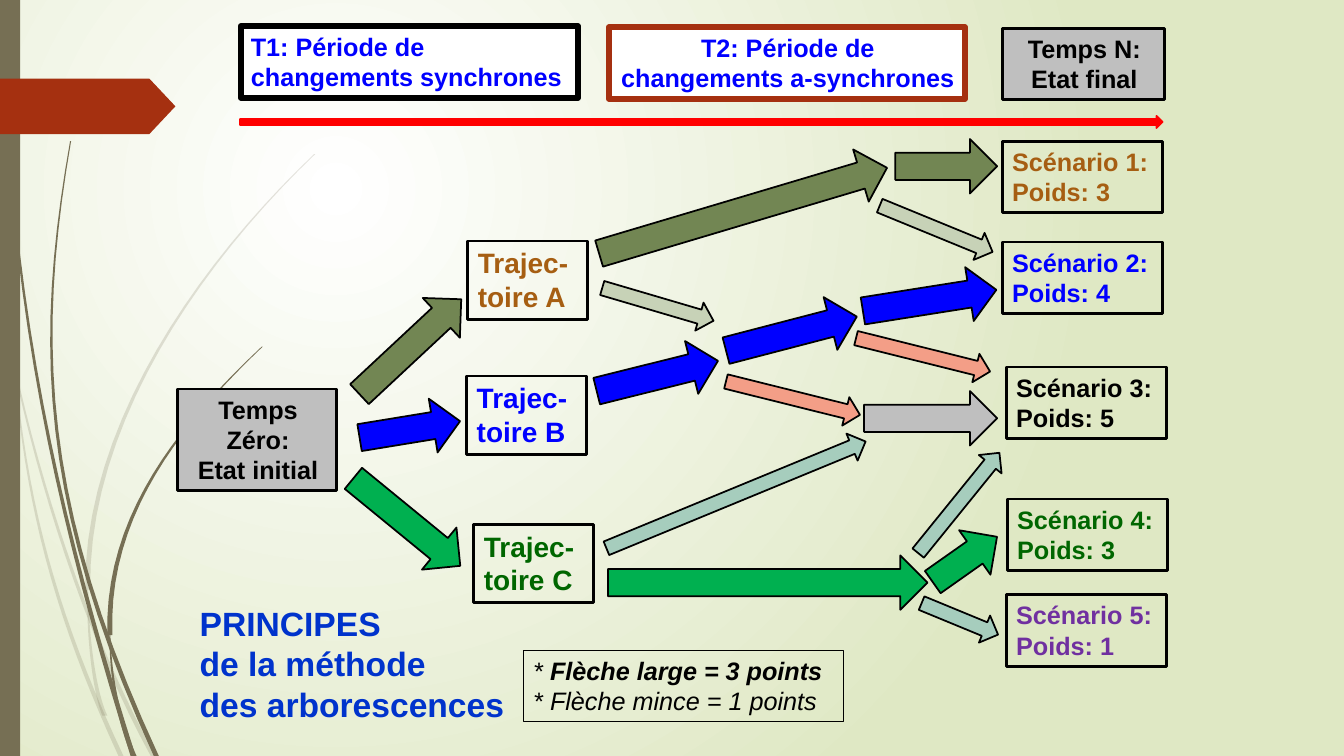
import pptx
import pptx.util
import pptx.dml.color
import pptx.enum.shapes
import pptx.enum.text
import lxml.etree

KIND = pptx.enum.shapes.MSO_SHAPE
LEFT = pptx.enum.text.PP_ALIGN.LEFT
CENTER = pptx.enum.text.PP_ALIGN.CENTER
DRAWING = "{http://schemas.openxmlformats.org/drawingml/2006/main}"

deck = pptx.Presentation()
deck.slide_width = pptx.util.Inches(13.33)
deck.slide_height = pptx.util.Inches(7.5)
slide = deck.slides.add_slide(deck.slide_layouts[5])
shapes = slide.shapes

# Square grid of 75 rows; every length below counts its cells
CELL = deck.slide_height / 75


def paint(shape, fill=None, line=None, width=1.25):
    shape.shadow.inherit = False
    for part, color in ((shape.fill, fill), (shape.line.fill, line)):
        if color:
            part.solid()
            part.fore_color.rgb = pptx.dml.color.RGBColor.from_string(color)
        else:
            part.background()
    if line:
        shape.line.width = pptx.util.Pt(width)


def write(frame, lines, size, color, align=LEFT, italic=False):
    frame.word_wrap = True
    frame.auto_size = pptx.enum.text.MSO_AUTO_SIZE.NONE
    frame.vertical_anchor = pptx.enum.text.MSO_ANCHOR.TOP
    frame.margin_right = pptx.util.Inches(0.08)
    for number, line in enumerate(lines):
        paragraph = frame.add_paragraph() if number else frame.paragraphs[0]
        paragraph.alignment = align
        for text, bold in line:
            run = paragraph.add_run()
            run.text = text
            run.font.name = "Arial"
            run.font.size = pptx.util.Pt(size)
            run.font.bold = bold
            run.font.italic = italic
            run.font.color.rgb = pptx.dml.color.RGBColor.from_string(color)


# Background: glow spreading from the upper left
glow = slide.background.fill
glow.gradient()
for stop, position, color in zip(glow.gradient_stops, (0, 1), ("FFFFFF", "DFE8C4")):
    stop.position = position
    stop.color.rgb = pptx.dml.color.RGBColor.from_string(color)
gradient = slide.element.xpath(".//p:bg//a:gradFill")[0]
for linear in gradient.findall(DRAWING + "lin"):
    gradient.remove(linear)
circle = lxml.etree.SubElement(gradient, DRAWING + "path", {"path": "circle"})
lxml.etree.SubElement(circle, DRAWING + "fillToRect",
                      {"l": "50000", "t": "50000", "r": "100000", "b": "100000"})

# Grass strands: cubic curves from thin tip to wider root
strands = {
    "20000": [((0, 29), (2.5, 44), (8, 62), (15.2, 75)),
              ((1.3, 35), (2.5, 50), (5.5, 61), (12, 75)),
              ((31.2, 15.3), (20, 26), (8.5, 42), (8.7, 58.5)),
              ((8.7, 58.5), (8.7, 64), (9.5, 69), (10.4, 71))],
    "100000": [((0.3, 0), (0.6, 30), (6, 52), (13.2, 75)),
               ((7, 14), (3.5, 34), (4, 50), (15.5, 75)),
               ((26, 34.4), (18, 42), (10.5, 51), (10.9, 63)),
               ((10.9, 63), (11, 68), (12, 72), (13.3, 75))],
}
STEPS = 20
for opacity, curves in strands.items():
    for curve in curves:
        left_edge, right_edge = [], []
        for step in range(STEPS + 1):
            t = step / STEPS
            shares = ((1 - t) ** 3, 3 * t * (1 - t) ** 2, 3 * t * t * (1 - t), t ** 3)
            x, y = (sum(s * v for s, v in zip(shares, axis)) for axis in zip(*curve))
            half = 0.05 + 0.2 * t
            left_edge.append(((x - half) * CELL, y * CELL))
            right_edge.append(((x + half) * CELL, y * CELL))
        outline = left_edge + right_edge[::-1]
        builder = shapes.build_freeform(*outline[0])
        builder.add_line_segments(outline[1:], close=True)
        strand = builder.convert_to_shape()
        paint(strand, "766F54")
        tint = strand.element.xpath("./p:spPr/a:solidFill/a:srgbClr")[0]
        lxml.etree.SubElement(tint, DRAWING + "alpha", {"val": opacity})

# Side band and ribbon
band = shapes.add_shape(KIND.RECTANGLE, 0, 0, round(2 * CELL), deck.slide_height)
paint(band, "766F54")
ribbon = shapes.add_shape(KIND.PENTAGON, 0, *(round(v * CELL) for v in (7.8, 17.4, 5.5)))
ribbon.adjustments[0] = 0.47
paint(ribbon, "A53010")

# Arrows: fill, border and thickness, then left, middle row, length, rotation
WIDE, THIN = 5.4, 2.9
arrows = [
    ("728653", "000000", WIDE, [(33.8, 34.4, 13.8, -43), (58.8, 20.9, 29.8, -16.6),
                                (88.8, 16.5, 10.1, 0)]),
    ("C7D2B7", "000000", THIN, [(59.5, 30.2, 11.5, 16.4), (86.8, 22.7, 12.1, 22.3)]),
    ("0000FF", "000000", WIDE, [(35.6, 42.6, 10.1, -9.3), (59, 37.3, 12.4, -14),
                                (71.8, 33.1, 13.4, -14.6), (85.5, 29.8, 13.4, -9)]),
    ("F39E87", "000000", THIN, [(84.7, 35.2, 13.7, 14), (71.8, 39.5, 13.7, 14)]),
    ("BFBFBF", "000000", WIDE, [(85.7, 41.5, 13.2, 0)]),
    ("A6CDBD", "000000", THIN, [(59.1, 49.1, 27.8, -22.4), (88.7, 49.9, 12.8, -51),
                                (91.1, 61.4, 8.2, 22.4)]),
    ("00B050", "000000", WIDE, [(33.5, 51.8, 13.7, 39.3), (60.3, 57.8, 31.7, 0),
                                (91.8, 55.5, 7.8, -35.2)]),
    ("FF0000", "FF0000", 1.2, [(23.8, 12.1, 91.5, 0)]),
]
for fill, border, thickness, places in arrows:
    for left, middle, length, turn in places:
        place = (left, middle - thickness / 2, length, thickness)
        arrow = shapes.add_shape(KIND.RIGHT_ARROW, *(round(v * CELL) for v in place))
        arrow.rotation = turn
        paint(arrow, fill, border)

# Boxes: left, top, width, rows of text, lines, size, colour, alignment, fill, border, width
boxes = [
    (23.9, 2.6, 33.4, 2, ["T1: Période de changements synchrones"],
     18, "0000FF", LEFT, "FFFFFF", "000000", 4.5),
    (60.4, 2.7, 35.3, 2, ["T2: Période de changements a-synchrones"],
     18, "0000FF", CENTER, "FFFFFF", "A53010", 4.5),
    (99.4, 2.8, 16.1, 2, ["Temps N:", "Etat final"],
     18, "000000", CENTER, "BFBFBF", "000000", 2),
    (17.6, 38.6, 15.8, 3, ["Temps Zéro:", "Etat initial"],
     18, "000000", CENTER, "BFBFBF", "000000", 2),
]
for letter, left, top, color in [("A", 46.4, 23.9, "A65E12"), ("B", 46.3, 37.3, "0000FF"),
                                 ("C", 47, 52, "006600")]:
    boxes.append((left, top, 11.9, 2, ["Trajec-toire " + letter],
                  20, color, LEFT, None, "000000", 2))
scenarios = [(99.4, 14, 3, "A65E12"), (99.4, 24, 4, "0000FF"), (99.8, 36.4, 5, "000000"),
             (99.9, 49.5, 3, "006600"), (99.8, 59, 1, "7030A0")]
for number, (left, top, weight, color) in enumerate(scenarios, 1):
    boxes.append((left, top, 15.9, 2, [f"Scénario {number}:", f"Poids: {weight}"],
                  18, color, LEFT, None, "000000", 2))
for left, top, width, rows, lines, size, color, align, fill, border, weight in boxes:
    place = (left, top, width, rows * size / 6 + 1.1)
    box = shapes.add_shape(KIND.RECTANGLE, *(round(v * CELL) for v in place))
    paint(box, fill, border, weight)
    write(box.text_frame, [[(line, True)] for line in lines], size, color, align)

# Legend
legend = shapes.add_shape(KIND.RECTANGLE, *(round(v * CELL) for v in (51.9, 64.5, 31.8, 7.1)))
paint(legend, None, "000000", 0.75)
write(legend.text_frame, [[("* ", False), ("Flèche large = 3 points", True)],
                          [("* Flèche mince = 1 points", False)]],
      18, "000000", italic=True)

# Title
title = shapes.title
title.left, title.top, title.width, title.height = (
    round(v * CELL) for v in (18.8, 59.3, 33.5, 13.1))
write(title.text_frame, [[(line, True)] for line in
                         ("PRINCIPES", "de la méthode", "des arborescences")], 24, "0033CC")

deck.save("out.pptx")
